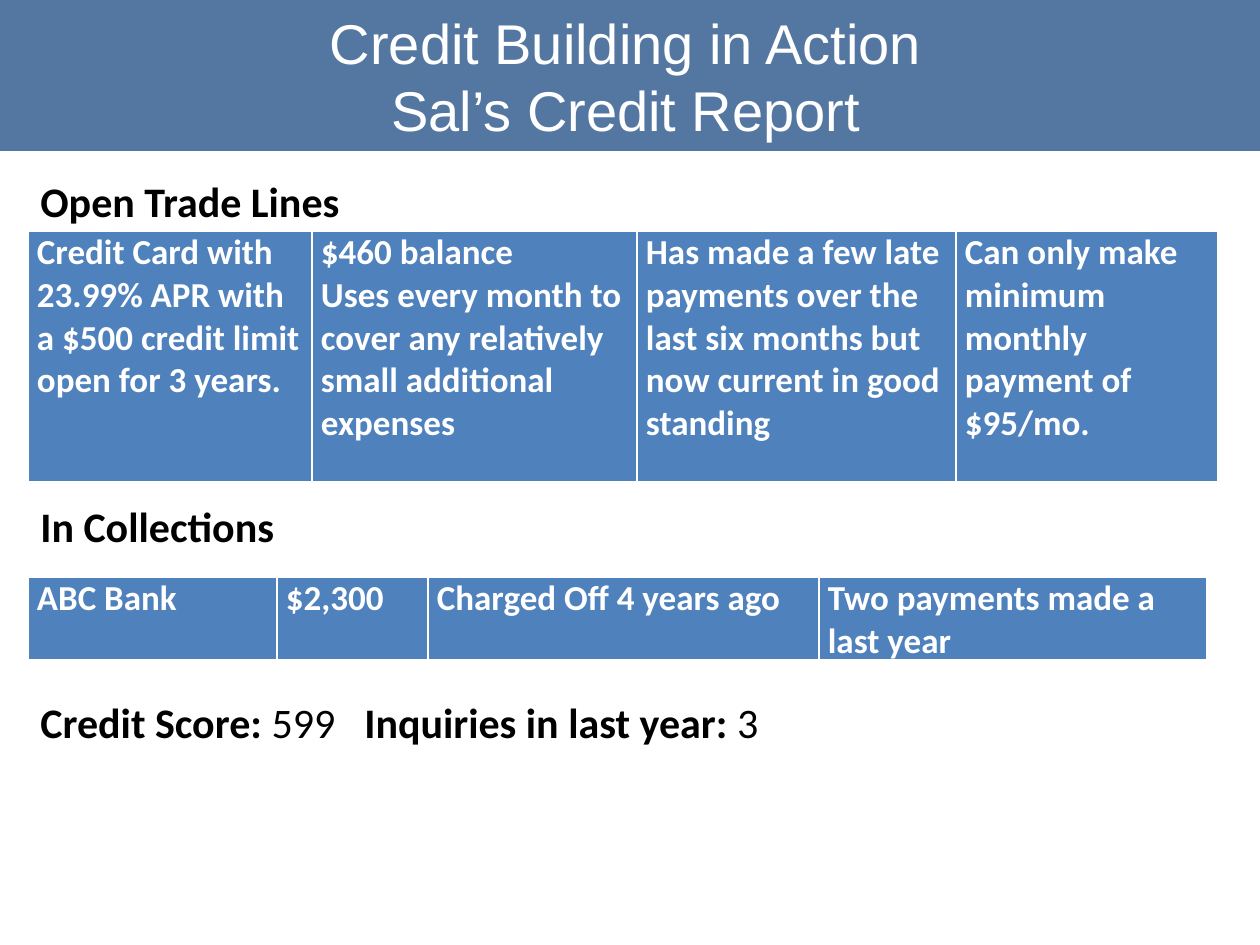
from lxml import etree
from pptx import Presentation
from pptx import util as u
from pptx.dml.color import RGBColor
from pptx.enum import shapes, text
from pptx.oxml.ns import qn

EMU_PER_PX = 914400 / 126
WHITE, BLACK, CELL_BLUE, BANNER_BLUE = "FFFFFF", "000000", "4F81BD", "376092"

TRADE_LINES = [
    ["Credit Card with 23.99% APR with a $500 credit limit open for 3 years."],
    ["$460 balance",
     "Uses every month to cover any relatively small additional expenses"],
    ["Has made a few late payments over the last six months but now current "
     "in good standing"],
    ["Can only make minimum monthly payment of $95/mo."],
]
COLLECTIONS = [["ABC Bank"], ["$2,300"], ["Charged Off 4 years ago"],
               ["Two payments made a last year"]]


def px(length):
    return u.Emu(round(length * EMU_PER_PX))


def color(value):
    return RGBColor.from_string(value)


def add_run(paragraph, words, size, font, ink, bold=False):
    run = paragraph.add_run()
    run.text = words
    run.font.size = u.Pt(size)
    run.font.name = font
    run.font.bold = bold
    run.font.color.rgb = color(ink)


def paragraphs(frame, count):
    """Return count paragraphs, the first being the one already there."""
    return [frame.paragraphs[0]] + [frame.add_paragraph() for _ in range(count - 1)]


def add_banner(slide):
    banner = slide.shapes.add_shape(
        shapes.MSO_SHAPE.RECTANGLE, px(-1), 0, px(1261), px(151))
    banner.shadow.inherit = False
    banner.line.fill.background()
    banner.fill.solid()
    banner.fill.fore_color.rgb = color(BANNER_BLUE)
    tint = banner.fill._xPr.find(f".//{qn('a:srgbClr')}")
    etree.SubElement(tint, qn("a:alpha"), val="85000")


def add_title(slide, lines):
    frame = slide.shapes.add_textbox(px(97), 0, px(1058), px(151)).text_frame
    frame.word_wrap = True
    frame.vertical_anchor = text.MSO_ANCHOR.MIDDLE
    frame.margin_left = frame.margin_right = px(15)
    frame.margin_top = frame.margin_bottom = px(8)
    for paragraph, line in zip(paragraphs(frame, len(lines)), lines):
        paragraph.alignment = text.PP_ALIGN.CENTER
        add_run(paragraph, line, 32, "Arial", WHITE)


def add_label(slide, top, width, parts, tab=None):
    """Add one line of (words, bold) parts, with an optional tab stop in px."""
    frame = slide.shapes.add_textbox(px(28), px(top), px(width), px(63)).text_frame
    frame.word_wrap = True
    paragraph = frame.paragraphs[0]
    if tab:
        stops = etree.SubElement(paragraph._p.get_or_add_pPr(), qn("a:tabLst"))
        etree.SubElement(stops, qn("a:tab"), pos=str(px(tab)), algn="l")
    for words, bold in parts:
        add_run(paragraph, words, 24, "Calibri", BLACK, bold)


def set_borders(cell):
    """Draw white cell borders, heavier at the bottom."""
    properties = cell._tc.get_or_add_tcPr()
    for place, (side, points) in enumerate(
            [("lnL", 1), ("lnR", 1), ("lnT", 1), ("lnB", 3)]):
        border = etree.Element(qn(f"a:{side}"), w=str(u.Pt(points)))
        fill = etree.SubElement(border, qn("a:solidFill"))
        etree.SubElement(fill, qn("a:srgbClr"), val=WHITE)
        properties.insert(place, border)


def add_account_table(slide, top, height, widths, entries):
    table = slide.shapes.add_table(
        1, len(widths), px(28), px(top), px(sum(widths)), px(height)).table
    for column, width in zip(table.columns, widths):
        column.width = px(width)
    for cell, lines in zip(table.rows[0].cells, entries):
        cell.margin_left = cell.margin_right = px(9)
        cell.margin_top = cell.margin_bottom = 0
        cell.fill.solid()
        cell.fill.fore_color.rgb = color(CELL_BLUE)
        set_borders(cell)
        for paragraph, line in zip(paragraphs(cell.text_frame, len(lines)), lines):
            add_run(paragraph, line, 20, "Calibri", WHITE, True)


def main():
    deck = Presentation()
    deck.slide_width, deck.slide_height = px(1260), px(945)
    slide = deck.slides.add_slide(deck.slide_layouts[6])
    add_banner(slide)
    add_title(slide, ["Credit Building in Action", "Sal’s Credit Report"])
    add_label(slide, 169, 328, [("Open Trade Lines", True)])
    add_account_table(slide, 231, 252, [284, 325, 319, 262], TRADE_LINES)
    add_label(slide, 494, 262, [("In Collections", True)])
    add_account_table(slide, 577, 84, [249, 151, 391, 388], COLLECTIONS)
    add_label(slide, 690, 750,
              [("Credit Score:", True), (" 599\t", False),
               ("Inquiries in last year: ", True), ("3", False)], tab=324)
    deck.save("out.pptx")


if __name__ == "__main__":
    main()
